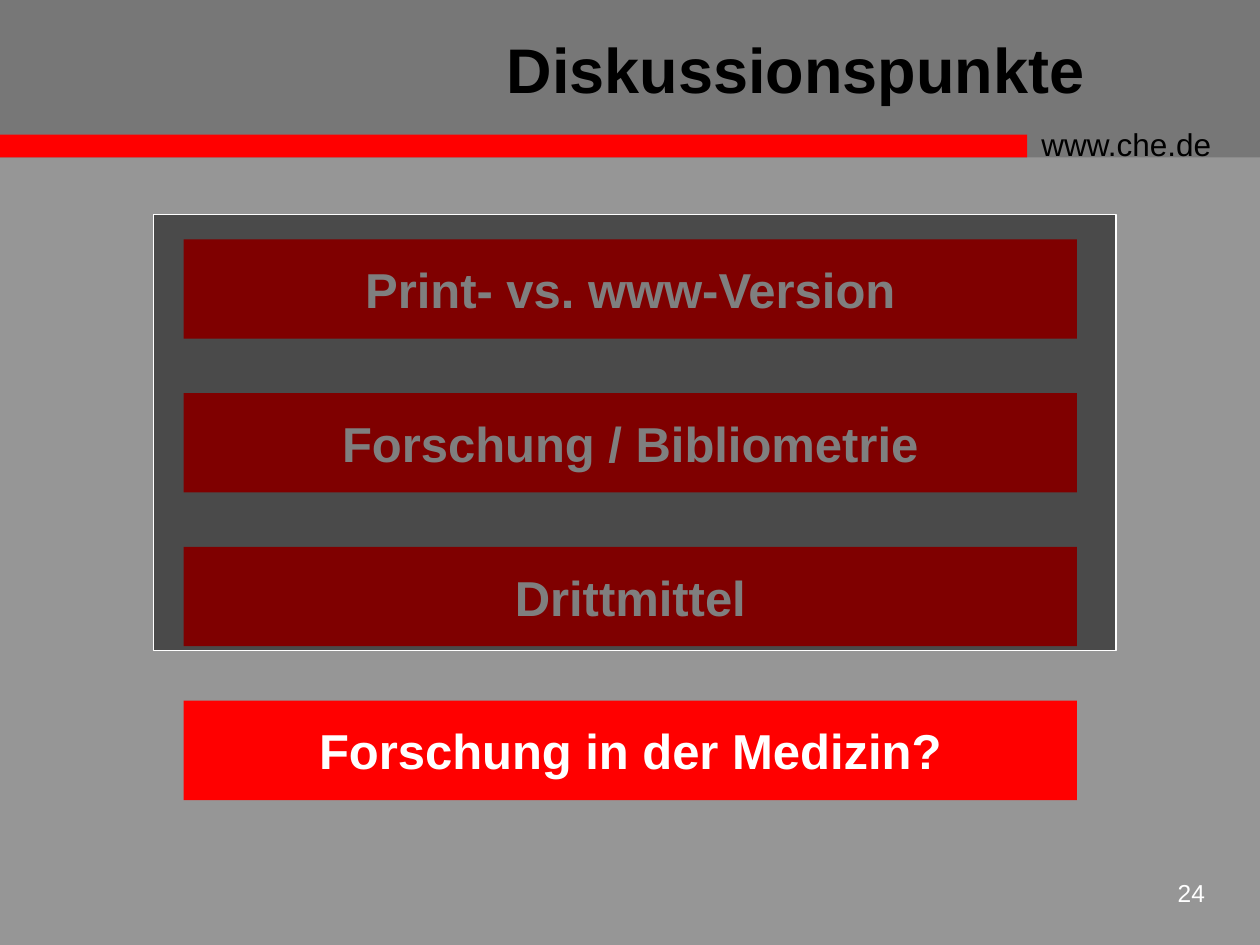
from pptx import Presentation
from pptx.dml.color import RGBColor
from pptx.enum import shapes, text
from pptx.oxml.ns import qn
from pptx.util import Pt
from lxml import etree

FONT = "Arial"
BLACK = RGBColor(0, 0, 0)
WHITE = RGBColor(0xFF, 0xFF, 0xFF)
RED = RGBColor(0xFF, 0, 0)
PAGE_GRAY = RGBColor(0x96, 0x96, 0x96)
HEADER_GRAY = RGBColor(0x77, 0x77, 0x77)

TOPICS = ["Print- vs. www-Version", "Forschung / Bibliometrie",
          "Drittmittel", "Forschung in der Medizin?"]


def write(sp, words, size, color, align, bold=False):
    tf = sp.text_frame
    tf.text = words
    p = tf.paragraphs[0]
    p.alignment = align
    font = p.runs[0].font
    font.name, font.size, font.bold = FONT, Pt(size), bold
    font.color.rgb = color


def add_rect(s, left, top, width, height, fill):
    sp = s.shapes.add_shape(shapes.MSO_SHAPE.RECTANGLE,
                            Pt(left), Pt(top), Pt(width), Pt(height))
    sp.shadow.inherit = False
    sp.fill.solid()
    sp.fill.fore_color.rgb = fill
    sp.line.fill.background()
    return sp


def add_label(s, left, top, width, height, words, size, color, align):
    sp = s.shapes.add_textbox(Pt(left), Pt(top), Pt(width), Pt(height))
    sp.text_frame.word_wrap = True
    write(sp, words, size, color, align)


def add_header(s, left, top, width, height):
    stripe = 13
    add_rect(s, left, top, width, height, HEADER_GRAY)
    add_rect(s, left, top + height - stripe, 587, stripe, RED)
    add_label(s, left + 588, top + height - 22.3, 126, 28.8,
              "www.che.de", 18, BLACK, text.PP_ALIGN.LEFT)

    title = s.shapes.title
    title.left, title.top = Pt(left + 256.5), Pt(top)
    title.width, title.height = Pt(396.5), Pt(77.8)
    write(title, "Diskussionspunkte", 36, BLACK, text.PP_ALIGN.CENTER, bold=True)
    title.text_frame.vertical_anchor = text.MSO_ANCHOR.MIDDLE
    # The title placeholder exists first, so bring it in front of the band.
    s.shapes._spTree.append(title._element)


def add_topics(s, left, top, width, height):
    """Spread the topic bars evenly over the height of the box."""
    bar = 56.8
    pitch = (height - bar) / (len(TOPICS) - 1)
    for i, topic in enumerate(TOPICS):
        sp = add_rect(s, left, top + i * pitch, width, bar, RED)
        write(sp, topic, 28, WHITE, text.PP_ALIGN.CENTER, bold=True)
        sp.text_frame.word_wrap = False
        sp.text_frame.vertical_anchor = text.MSO_ANCHOR.MIDDLE


def add_veil(s, left, top, width, height):
    """Half-transparent cover that dims the topics already discussed."""
    sp = add_rect(s, left, top, width, height, BLACK)
    color = sp.fill._xPr.find(qn("a:solidFill"))[0]
    etree.SubElement(color, qn("a:alpha")).set("val", "50000")
    sp.line.color.rgb = WHITE
    sp.line.width = Pt(0.75)


def main():
    prs = Presentation()
    prs.slide_width, prs.slide_height = Pt(720), Pt(540)
    s = prs.slides.add_slide(prs.slide_layouts[5])
    s.background.fill.solid()
    s.background.fill.fore_color.rgb = PAGE_GRAY

    add_header(s, 0, 0, 720, 90)
    add_label(s, 653.8, 498.2, 41.8, 30.2, "24", 14, WHITE, text.PP_ALIGN.RIGHT)
    add_topics(s, 105, 136.8, 510.4, 320.4)
    add_veil(s, 87.8, 122.4, 550, 249.2)
    prs.save("out.pptx")


if __name__ == "__main__":
    main()
